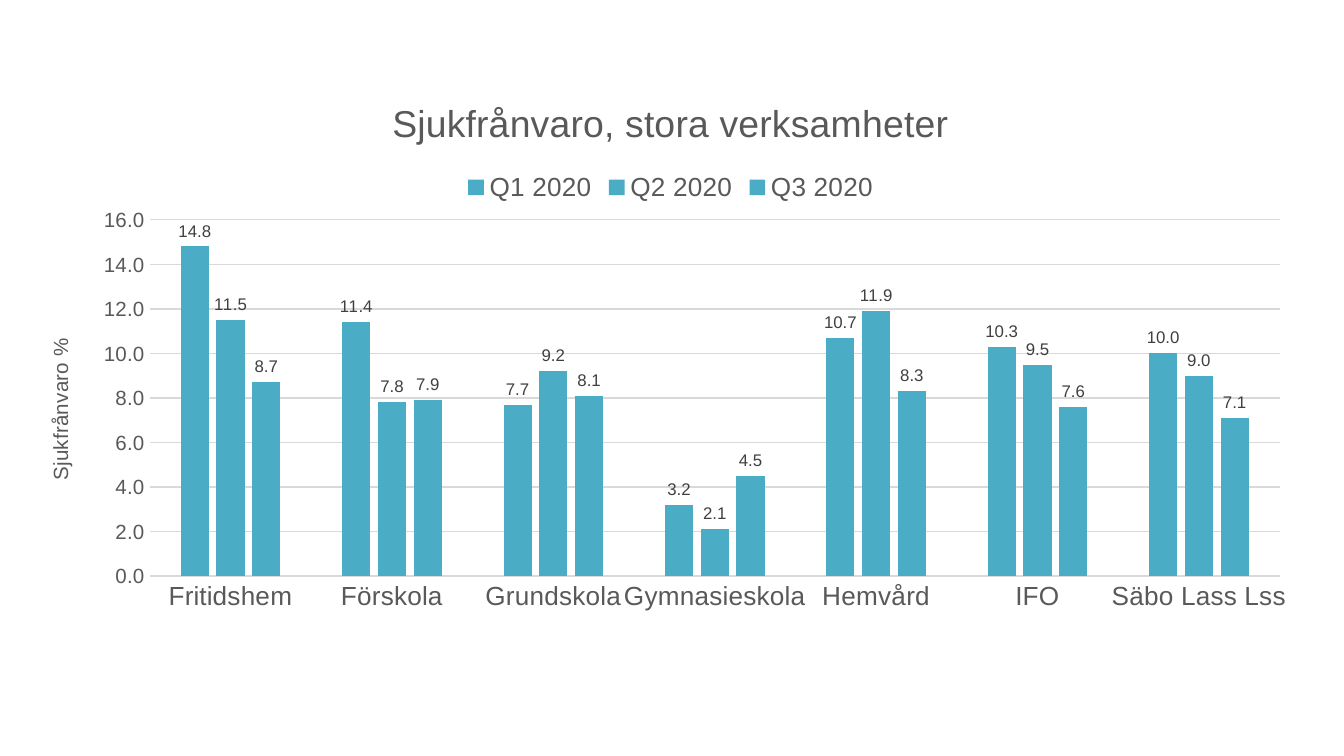
from pptx import Presentation
from pptx.chart.data import CategoryChartData
from pptx.dml.color import RGBColor
from pptx.enum.chart import XL_CHART_TYPE, XL_LABEL_POSITION, XL_LEGEND_POSITION, XL_TICK_MARK
from pptx.oxml import parse_xml
from pptx.oxml.ns import nsdecls
from pptx.util import Cm, Pt

TITLE = "Sjukfrånvaro, stora verksamheter"
AXIS_TITLE = "Sjukfrånvaro %"
UNITS = ["Fritidshem", "Förskola", "Grundskola", "Gymnasieskola",
         "Hemvård", "IFO", "Säbo Lass Lss"]
QUARTERS = {
    "Q1 2020": [14.8, 11.4, 7.7, 3.2, 10.7, 10.3, 10.0],
    "Q2 2020": [11.5, 7.8, 9.2, 2.1, 11.9, 9.5, 9.0],
    "Q3 2020": [8.7, 7.9, 8.1, 4.5, 8.3, 7.6, 7.1],
}
PLOT_AREA = {"x": 0.087, "y": 0.22, "w": 0.896, "h": 0.532}
NUMBER_FORMAT = "0.0"

THEME = {
    "font": "Arial",
    "bar": RGBColor.from_string("4BACC6"),
    "text": RGBColor.from_string("595959"),
    "label": RGBColor.from_string("404040"),
    "rule": RGBColor.from_string("D9D9D9"),
    "title_size": 20,
    "category_size": 14,
    "axis_size": 11,
    "label_size": 9,
}


def format_font(font, size, color=THEME["text"]):
    font.name = THEME["font"]
    font.size = Pt(size)
    font.bold = False
    font.color.rgb = color


def write_text(frame, text, *, size, color=THEME["text"]):
    paragraph = frame.paragraphs[0]
    span = paragraph.add_run()
    span.text = text
    format_font(span.font, size, color)


def format_line(line):
    line.color.rgb = THEME["rule"]
    line.width = Pt(0.75)


def place_plot(chart):
    modes = "".join(f'<c:{side}Mode val="edge"/>' for side in "xy")
    sizes = "".join(f'<c:{key} val="{value}"/>' for key, value in PLOT_AREA.items())
    layout = parse_xml(
        f'<c:layout {nsdecls("c")}><c:manualLayout><c:layoutTarget val="inner"/>'
        f"{modes}{sizes}</c:manualLayout></c:layout>")
    area = chart.element.xpath("c:chart/c:plotArea")[0]
    for old_layout in area.xpath("c:layout"):
        area.remove(old_layout)
    area.insert(0, layout)


def format_axes(chart):
    category_axis, value_axis = chart.category_axis, chart.value_axis
    for axis, size in ((category_axis, THEME["category_size"]),
                       (value_axis, THEME["axis_size"])):
        axis.major_tick_mark = XL_TICK_MARK.NONE
        axis.minor_tick_mark = XL_TICK_MARK.NONE
        format_font(axis.tick_labels.font, size)
    format_line(category_axis.format.line)
    value_axis.minimum_scale = 0
    value_axis.maximum_scale = 16
    value_axis.major_unit = 2
    value_axis.format.line.fill.background()
    value_axis.has_major_gridlines = True
    format_line(value_axis.major_gridlines.format.line)
    value_axis.tick_labels.number_format = NUMBER_FORMAT
    value_axis.tick_labels.number_format_is_linked = False
    frame = value_axis.axis_title.text_frame
    write_text(frame, AXIS_TITLE, size=THEME["axis_size"])
    frame._txBody.bodyPr.set("rot", "-5400000")


def format_bars(chart):
    plot = chart.plots[0]
    plot.gap_width = 219
    plot.overlap = -27
    plot.vary_by_categories = False
    for series in plot.series:
        series.format.fill.solid()
        series.format.fill.fore_color.rgb = THEME["bar"]
        labels = series.data_labels
        labels.show_value = True
        labels.position = XL_LABEL_POSITION.OUTSIDE_END
        labels.number_format = NUMBER_FORMAT
        labels.number_format_is_linked = False
        format_font(labels.font, THEME["label_size"], THEME["label"])


def add_absence_chart(page):
    data = CategoryChartData(number_format=NUMBER_FORMAT)
    data.categories = UNITS
    for quarter, values in QUARTERS.items():
        data.add_series(quarter, values)
    chart = page.shapes.add_chart(
        XL_CHART_TYPE.COLUMN_CLUSTERED,
        Cm(0.76), Cm(1.37), Cm(23.83), Cm(12.65), data).chart
    format_font(chart.font, 10)
    chart.has_title = True
    write_text(chart.chart_title.text_frame, TITLE, size=THEME["title_size"])
    chart.chart_title.include_in_layout = False
    chart.has_legend = True
    chart.legend.position = XL_LEGEND_POSITION.TOP
    chart.legend.include_in_layout = False
    format_font(chart.legend.font, THEME["category_size"])
    format_axes(chart)
    format_bars(chart)
    place_plot(chart)


def main():
    deck = Presentation()
    deck.slide_width, deck.slide_height = Cm(25.4), Cm(14.28)
    page = deck.slides.add_slide(deck.slide_layouts.get_by_name("Blank"))
    add_absence_chart(page)
    deck.save("out.pptx")


if __name__ == "__main__":
    main()
